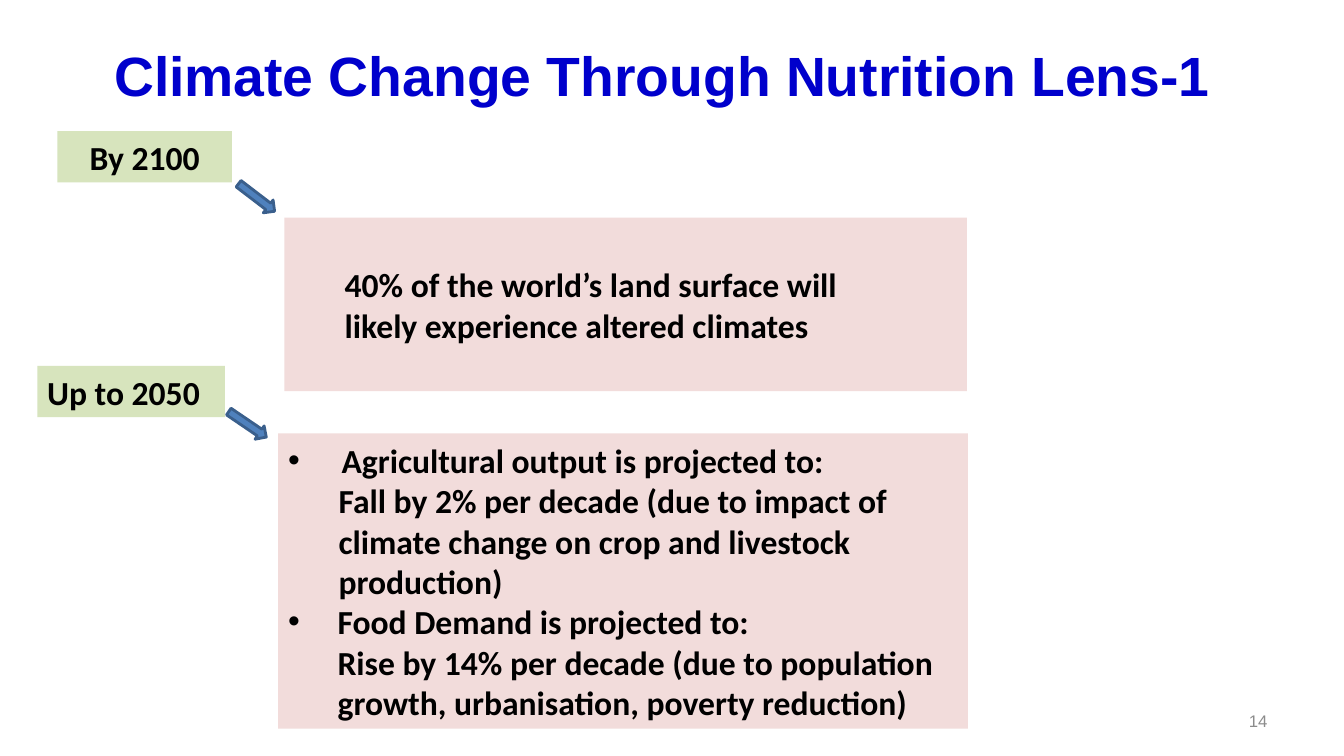
from dataclasses import dataclass

from lxml.etree import SubElement
from pptx import Presentation
from pptx.dml.color import RGBColor
from pptx.enum.shapes import MSO_SHAPE
from pptx.enum.text import MSO_ANCHOR, PP_ALIGN
from pptx.oxml.ns import qn
from pptx.util import Inches, Pt

PERIOD_GREEN = "D7E4BD"
FINDING_PINK = "F2DCDB"


@dataclass
class Line:
    text: str
    indent: float = 0
    bullet: bool = False


@dataclass
class Block:
    left: float
    top: float
    width: float
    height: float
    lines: list[Line]
    fill: str | None = None
    align: PP_ALIGN = PP_ALIGN.LEFT
    size: float = 24
    font: str = "Calibri"
    color: str = "000000"
    bold: bool = True


@dataclass
class Arrow:
    left: float
    top: float
    angle: float


def rgb(value: str) -> RGBColor:
    return RGBColor.from_string(value)


def add_line(paragraph, line: Line, block: Block) -> None:
    paragraph.alignment = block.align
    properties = paragraph._p.get_or_add_pPr()
    properties.set("marL", str(Inches(line.indent)))
    properties.set("indent", str(-Inches(line.indent) if line.bullet else 0))
    if line.bullet:
        SubElement(properties, qn("a:buFont"), typeface="Arial")
        SubElement(properties, qn("a:buChar"), char="•")
    run = paragraph.add_run()
    run.text = line.text
    run.font.name = block.font
    run.font.size = Pt(block.size)
    run.font.bold = block.bold
    run.font.color.rgb = rgb(block.color)


def add_block(slide, block: Block) -> None:
    box = slide.shapes.add_textbox(
        Inches(block.left), Inches(block.top), Inches(block.width), Inches(block.height))
    if block.fill:
        box.fill.solid()
        box.fill.fore_color.rgb = rgb(block.fill)
    frame = box.text_frame
    frame.word_wrap = True
    frame.vertical_anchor = MSO_ANCHOR.MIDDLE
    for index, line in enumerate(block.lines):
        paragraph = frame.add_paragraph() if index else frame.paragraphs[0]
        add_line(paragraph, line, block)


def add_arrow(slide, arrow: Arrow) -> None:
    pointer = slide.shapes.add_shape(
        MSO_SHAPE.RIGHT_ARROW, Inches(arrow.left), Inches(arrow.top), Inches(0.45), Inches(0.16))
    pointer.rotation = arrow.angle
    pointer.shadow.inherit = False
    pointer.fill.solid()
    pointer.fill.fore_color.rgb = rgb("4F81BD")
    pointer.line.color.rgb = rgb("3A5F8C")
    pointer.line.width = Pt(2)


BLOCKS = [
    # Title
    Block(0.57, 0.11, 12, 1.25, [Line("Climate Change Through Nutrition Lens-1")],
          align=PP_ALIGN.CENTER, size=39.5, font="Arial", color="0000CC"),
    # By 2100
    Block(0.57, 1.3, 1.73, 0.51, [Line("By 2100")], PERIOD_GREEN, PP_ALIGN.CENTER),
    Block(2.82, 2.16, 6.77, 1.72, [
        Line("40% of the world’s land surface will", 0.5),
        Line("likely experience altered climates", 0.5),
    ], FINDING_PINK),
    # Up to 2050
    Block(0.37, 3.63, 1.86, 0.51, [Line("Up to 2050")], PERIOD_GREEN),
    Block(2.76, 4.3, 6.84, 2.93, [
        Line("Agricultural output is projected to:", 0.53, bullet=True),
        Line("Fall by 2% per decade (due to impact of climate change on crop "
             "and livestock production)", 0.5),
        Line("Food Demand is projected to:", 0.49, bullet=True),
        Line("Rise by 14% per decade (due to population growth, urbanisation, "
             "poverty reduction)", 0.49),
    ], FINDING_PINK),
    # Slide number
    Block(9.56, 6.95, 3.11, 0.4, [Line("14")], align=PP_ALIGN.RIGHT,
          size=12, font="Arial", color="8C8C8C", bold=False),
]

# From each period to its findings
ARROWS = [Arrow(2.32, 1.88, 37.4), Arrow(2.23, 4.13, 34.2)]


def main() -> None:
    presentation = Presentation()
    presentation.slide_width = Inches(13.33)
    presentation.slide_height = Inches(7.5)
    slide = presentation.slides.add_slide(presentation.slide_layouts[6])
    for block in BLOCKS:
        add_block(slide, block)
    for arrow in ARROWS:
        add_arrow(slide, arrow)
    presentation.save("out.pptx")


if __name__ == "__main__":
    main()
